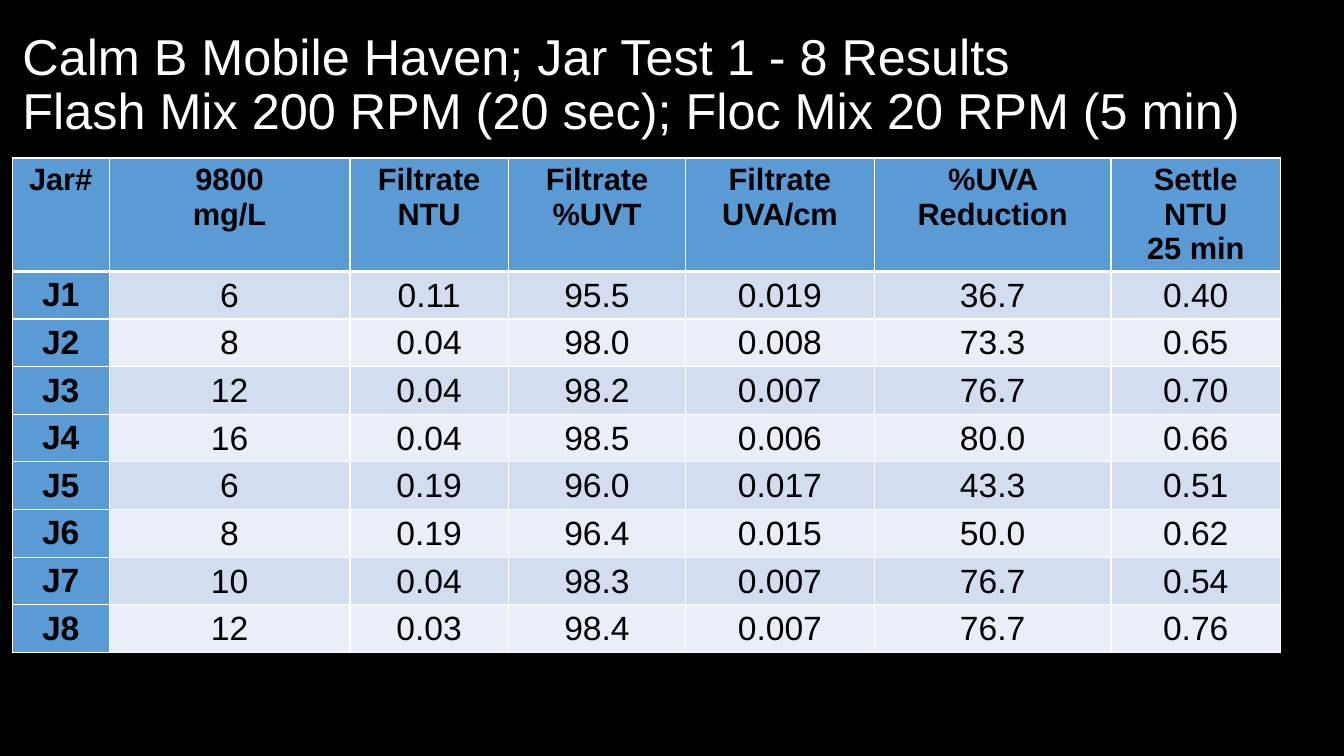
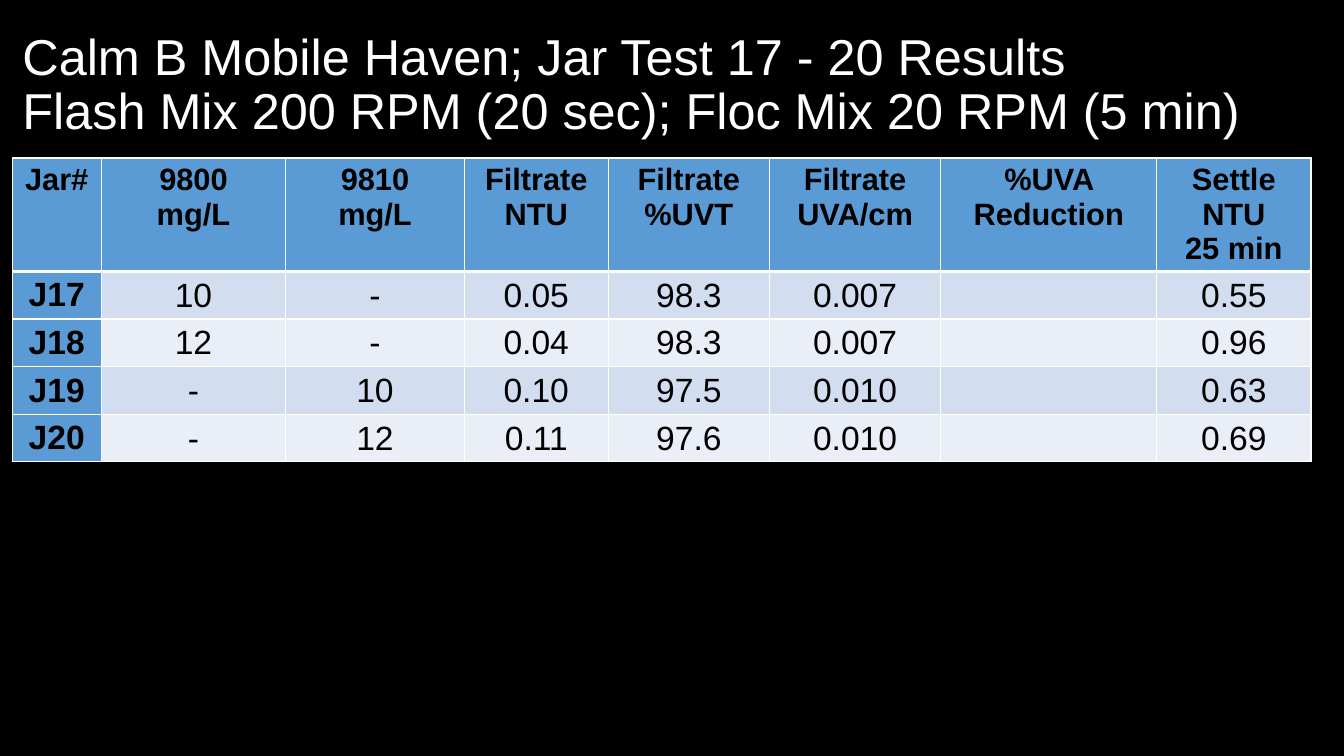
from copy import deepcopy
from dataclasses import dataclass

from lxml.etree import SubElement
from pptx import Presentation
from pptx.dml.color import RGBColor
from pptx.enum.text import MSO_ANCHOR, MSO_AUTO_SIZE, PP_ALIGN
from pptx.oxml.ns import qn
from pptx.util import Cm, Pt

SITE = "Calm B Mobile Haven"
MIXING = "Flash Mix 200 RPM (20 sec); Floc Mix 20 RPM (5 min)"
MEASURES = ["Filtrate\nNTU", "Filtrate\n%UVT", "Filtrate\nUVA/cm",
            "%UVA Reduction", "Settle\nNTU\n25 min"]

JAR_TESTS = [
    {
        "title": f"{SITE}; Jar Test 1 - 8 Results\n{MIXING}",
        "header": ["Jar#", "9800\nmg/L", *MEASURES],
        "widths": [2.44, 6.07, 3.99, 4.47, 4.75, 5.97, 4.27],
        "jars": [
            ("J1", "6", "0.11", "95.5", "0.019", "36.7", "0.40"),
            ("J2", "8", "0.04", "98.0", "0.008", "73.3", "0.65"),
            ("J3", "12", "0.04", "98.2", "0.007", "76.7", "0.70"),
            ("J4", "16", "0.04", "98.5", "0.006", "80.0", "0.66"),
            ("J5", "6", "0.19", "96.0", "0.017", "43.3", "0.51"),
            ("J6", "8", "0.19", "96.4", "0.015", "50.0", "0.62"),
            ("J7", "10", "0.04", "98.3", "0.007", "76.7", "0.54"),
            ("J8", "12", "0.03", "98.4", "0.007", "76.7", "0.76"),
        ],
    },
    {
        "title": f"{SITE}; Jar Test 17 - 20 Results\n{MIXING}",
        "header": ["Jar#", "9800\nmg/L", "9810\nmg/L", *MEASURES],
        "widths": [2.24, 4.65, 4.5, 3.63, 4.06, 4.32, 5.44, 3.89],
        "jars": [
            ("J17", "10", "-", "0.05", "98.3", "0.007", "", "0.55"),
            ("J18", "12", "-", "0.04", "98.3", "0.007", "", "0.96"),
            ("J19", "-", "10", "0.10", "97.5", "0.010", "", "0.63"),
            ("J20", "-", "12", "0.11", "97.6", "0.010", "", "0.69"),
        ],
    },
]


@dataclass(frozen=True)
class Theme:
    font: str = "Arial"
    background: str = "000000"
    title_text: str = "FFFFFF"
    table_text: str = "000000"
    heading_fill: str = "5B9BD5"
    bands: tuple = ("D2DEEF", "EAEFF7")
    border: str = "FFFFFF"
    title_size: int = 36
    header_size: int = 22
    body_size: int = 24
    thin: int = 1
    thick: int = 3


THEME = Theme()
LEFT, TABLE_TOP = Cm(0.31), Cm(3.98)
HEADER_HEIGHT, JAR_HEIGHT = Cm(2.85), Cm(1.2)
TITLE_PLACE = {"left": LEFT, "top": Cm(0.33), "width": Cm(33.1), "height": Cm(3.68)}
TITLE_FRAME = {"vertical_anchor": MSO_ANCHOR.MIDDLE, "auto_size": MSO_AUTO_SIZE.NONE,
               "word_wrap": True}
TITLE_PARAGRAPH = {"alignment": PP_ALIGN.LEFT, "line_spacing": 0.9}
VALUE_CELL = {"vertical_anchor": MSO_ANCHOR.MIDDLE, "margin_left": Cm(0.02),
              "margin_right": Cm(0.02), "margin_top": Cm(0.02), "margin_bottom": 0}


def apply(target, values):
    for name, value in values.items():
        setattr(target, name, value)


def format_text(paragraph, size, color, bold=False):
    for run in paragraph.runs:
        apply(run.font, {"name": THEME.font, "size": Pt(size), "bold": bold})
        run.font.color.rgb = RGBColor.from_string(color)


def add_title(slide, wording):
    title = slide.shapes.title
    apply(title, TITLE_PLACE)
    apply(title.text_frame, TITLE_FRAME)
    paragraph = title.text_frame.paragraphs[0]
    paragraph.text = wording
    apply(paragraph, TITLE_PARAGRAPH)
    format_text(paragraph, THEME.title_size, THEME.title_text)
    for line_break in paragraph._p.findall(qn("a:br")):
        line_break.append(deepcopy(paragraph.runs[0]._r.rPr))


def draw_borders(cell, row):
    widths = {"L": THEME.thin, "R": THEME.thin,
              "T": THEME.thick if row == 1 else THEME.thin,
              "B": THEME.thick if row == 0 else THEME.thin}
    properties = cell._tc.get_or_add_tcPr()
    for side, width in widths.items():
        line = SubElement(properties, qn(f"a:ln{side}"), w=str(Pt(width)))
        SubElement(SubElement(line, qn("a:solidFill")), qn("a:srgbClr"), val=THEME.border)


def fill_cell(cell, wording, row, column):
    heading = row == 0 or column == 0
    draw_borders(cell, row)
    cell.fill.solid()
    cell.fill.fore_color.rgb = RGBColor.from_string(
        THEME.heading_fill if heading else THEME.bands[(row - 1) % 2])
    if not heading:
        apply(cell, VALUE_CELL)
    cell.text = wording
    for paragraph in cell.text_frame.paragraphs:
        paragraph.alignment = PP_ALIGN.CENTER
        format_text(paragraph, THEME.body_size if row else THEME.header_size,
                    THEME.table_text, heading)


def add_results(slide, test):
    rows = [test["header"], *test["jars"]]
    widths = [Cm(width) for width in test["widths"]]
    heights = [HEADER_HEIGHT] + [JAR_HEIGHT] * len(test["jars"])
    results = slide.shapes.add_table(len(rows), len(widths), LEFT, TABLE_TOP,
                                     sum(widths), sum(heights)).table
    apply(results, {"first_col": True, "horz_banding": False})
    for column, width in zip(results.columns, widths):
        column.width = width
    for row, height in zip(results.rows, heights):
        row.height = height
    for r, row in enumerate(rows):
        for c, wording in enumerate(row):
            fill_cell(results.cell(r, c), wording, r, c)


def main():
    deck = Presentation()
    apply(deck, {"slide_width": Cm(33.87), "slide_height": Cm(19.05)})
    backdrop = deck.slide_master.background.fill
    backdrop.solid()
    backdrop.fore_color.rgb = RGBColor.from_string(THEME.background)
    title_only = deck.slide_layouts.get_by_name("Title Only")
    for test in JAR_TESTS:
        slide = deck.slides.add_slide(title_only)
        add_title(slide, test["title"])
        add_results(slide, test)
    deck.save("out.pptx")


if __name__ == "__main__":
    main()
